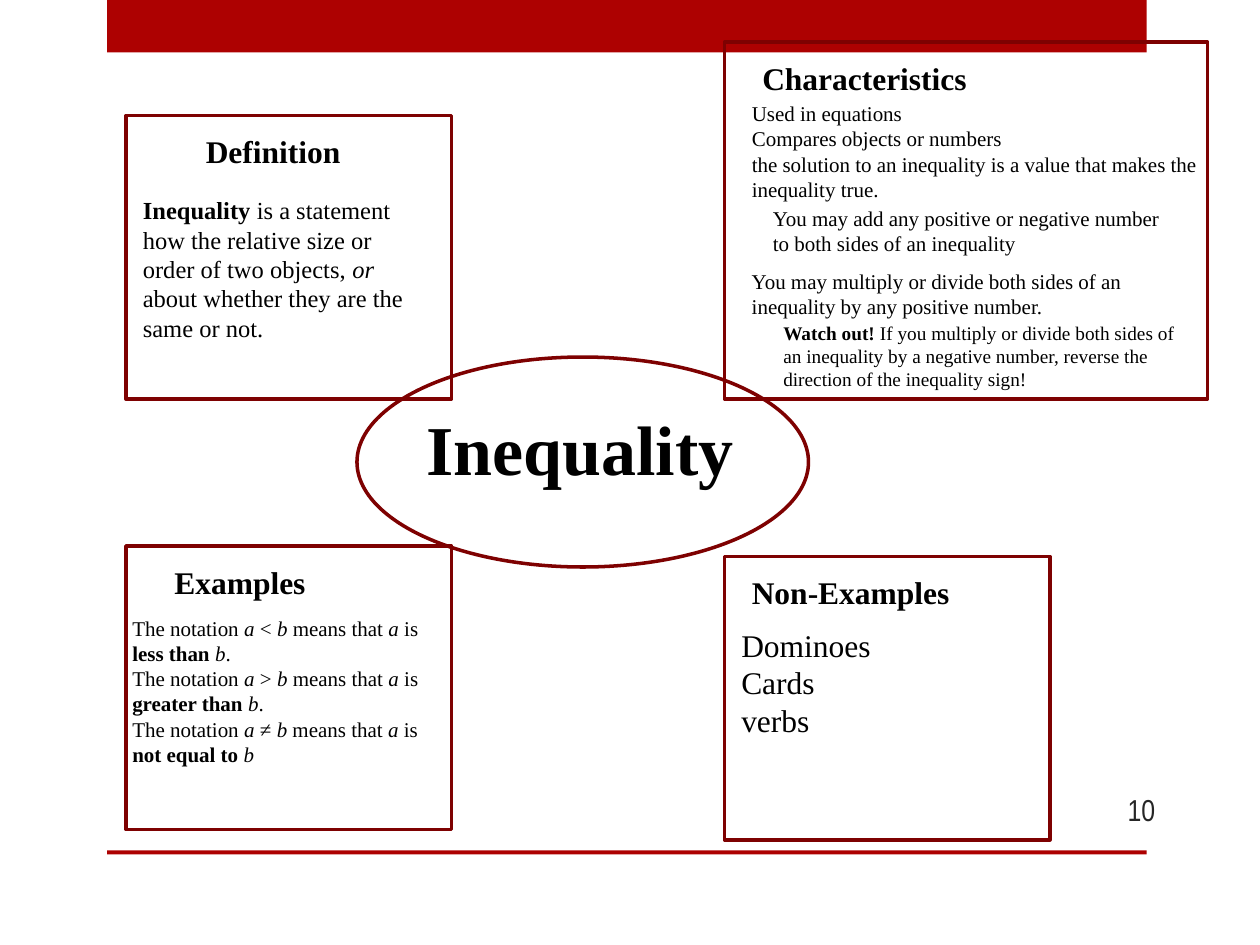
from dataclasses import dataclass

from pptx import Presentation
from pptx.dml.color import RGBColor
from pptx.enum.shapes import MSO_SHAPE
from pptx.enum.text import MSO_ANCHOR, MSO_AUTO_SIZE, PP_ALIGN
from pptx.slide import Slide
from pptx.util import Pt


@dataclass(frozen=True)
class Theme:
    band: RGBColor = RGBColor(0xAD, 0x01, 0x01)
    edge: RGBColor = RGBColor(0x7E, 0x01, 0x01)
    ink: RGBColor = RGBColor(0, 0, 0)
    gray: RGBColor = RGBColor(0x26, 0x26, 0x26)
    serif: str = "Times New Roman"
    narrow: str = "Arial Narrow"
    hero: float = 40
    head: float = 18
    lead: float = 14
    body: float = 12
    note: float = 11
    page: float = 17.3
    line: float = 2
    inset: float = 3.6


@dataclass(frozen=True)
class Rect:
    left: float
    top: float
    width: float
    height: float

    def points(self) -> tuple[Pt, Pt, Pt, Pt]:
        return Pt(self.left), Pt(self.top), Pt(self.width), Pt(self.height)


@dataclass(frozen=True)
class Label:
    rect: Rect
    size: float
    lines: tuple[str, ...]


THEME = Theme()
BOLD, SLANT, BREAK = "*", "_", "|"

BANDS = (Rect(61.2, 0, 594, 30), Rect(61.2, 486, 594, 2.2))
FRAMES = (
    Rect(72, 66, 186, 162),
    Rect(414, 24, 276, 204),
    Rect(72, 312, 186, 162),
    Rect(414, 318, 186, 162),
)
OVAL = Rect(204, 204, 258, 120)

SIGNS = (
    ("<", "less than", "|."),
    (">", "greater than", "|."),
    ("≠", "not equal to", ""),
)
RULES = tuple(
    f"The notation |_a| {sign} |_b| means that |_a| is |*{name} |_b{stop}"
    for sign, name, stop in SIGNS
)

LABELS = (
    Label(Rect(114, 72, 108, 27), THEME.head, ("*Definition",)),
    Label(Rect(432, 30, 150, 27), THEME.head, ("*Characteristics",)),
    Label(Rect(96, 318, 126, 27), THEME.head, ("*Examples",)),
    Label(Rect(426, 324, 162, 27), THEME.head, ("*Non-Examples",)),
    Label(Rect(240, 228, 198, 53), THEME.hero, ("*Inequality",)),
    Label(Rect(78, 108, 162, 86), THEME.lead, (
        "*Inequality| is a statement how the relative size or order of two "
        "objects, |_or| about whether they are the same or not.",
    )),
    Label(Rect(72, 348, 180, 96), THEME.body, RULES),
    Label(Rect(426, 54, 264, 114), THEME.body, (
        "Used in equations",
        "Compares objects or numbers",
        "the solution to an inequality is a value that makes the inequality true.",
    )),
    Label(Rect(438, 114, 240, 37), THEME.body, (
        "You may add any positive or negative number to both sides of an inequality",
    )),
    Label(Rect(426, 150, 252, 37), THEME.body, (
        "You may multiply or divide both sides of an inequality by any positive number.",
    )),
    Label(Rect(444, 180, 240, 55), THEME.note, (
        "*Watch out!| If you multiply or divide both sides of an inequality by a "
        "negative number, reverse the direction of the inequality sign!",
    )),
    Label(Rect(420, 354, 138, 69), THEME.head, ("Dominoes", "Cards", "verbs")),
)
PAGE = Rect(600, 448, 60, 29)


def fill_band(slide: Slide, rect: Rect) -> None:
    shape = slide.shapes.add_shape(MSO_SHAPE.RECTANGLE, *rect.points())
    shape.shadow.inherit = False
    shape.fill.solid()
    shape.fill.fore_color.rgb = THEME.band
    shape.line.fill.background()


def draw_frame(slide: Slide, kind: MSO_SHAPE, rect: Rect) -> None:
    shape = slide.shapes.add_shape(kind, *rect.points())
    shape.shadow.inherit = False
    shape.fill.background()
    shape.line.color.rgb = THEME.edge
    shape.line.width = Pt(THEME.line)


def make_box(slide: Slide, rect: Rect, inset: float):
    frame = slide.shapes.add_textbox(*rect.points()).text_frame
    frame.word_wrap = True
    frame.margin_left = frame.margin_right = Pt(inset)
    frame.margin_top = frame.margin_bottom = Pt(inset)
    return frame


def style_font(font, name: str, size: float, color: RGBColor) -> None:
    font.name = name
    font.size = Pt(size)
    font.color.rgb = color


def write_label(slide: Slide, label: Label) -> None:
    frame = make_box(slide, label.rect, THEME.inset)
    frame.auto_size = MSO_AUTO_SIZE.SHAPE_TO_FIT_TEXT
    for index, line in enumerate(label.lines):
        para = frame.add_paragraph() if index else frame.paragraphs[0]
        for part in line.split(BREAK):
            run = para.add_run()
            run.text = part.lstrip(BOLD + SLANT)
            style_font(run.font, THEME.serif, label.size, THEME.ink)
            run.font.bold = part.startswith(BOLD)
            run.font.italic = part.startswith(SLANT)


def write_page(slide: Slide, rect: Rect, text: str) -> None:
    frame = make_box(slide, rect, 0)
    frame.text = text
    frame.vertical_anchor = MSO_ANCHOR.MIDDLE
    para = frame.paragraphs[0]
    para.alignment = PP_ALIGN.RIGHT
    style_font(para.runs[0].font, THEME.narrow, THEME.page, THEME.gray)


def main() -> None:
    deck = Presentation()
    deck.slide_width, deck.slide_height = Pt(720), Pt(540)
    slide = deck.slides.add_slide(deck.slide_layouts[6])
    for rect in BANDS:
        fill_band(slide, rect)
    for rect in FRAMES:
        draw_frame(slide, MSO_SHAPE.RECTANGLE, rect)
    draw_frame(slide, MSO_SHAPE.OVAL, OVAL)
    for label in LABELS:
        write_label(slide, label)
    write_page(slide, PAGE, "10")
    deck.save("out.pptx")


if __name__ == "__main__":
    main()
